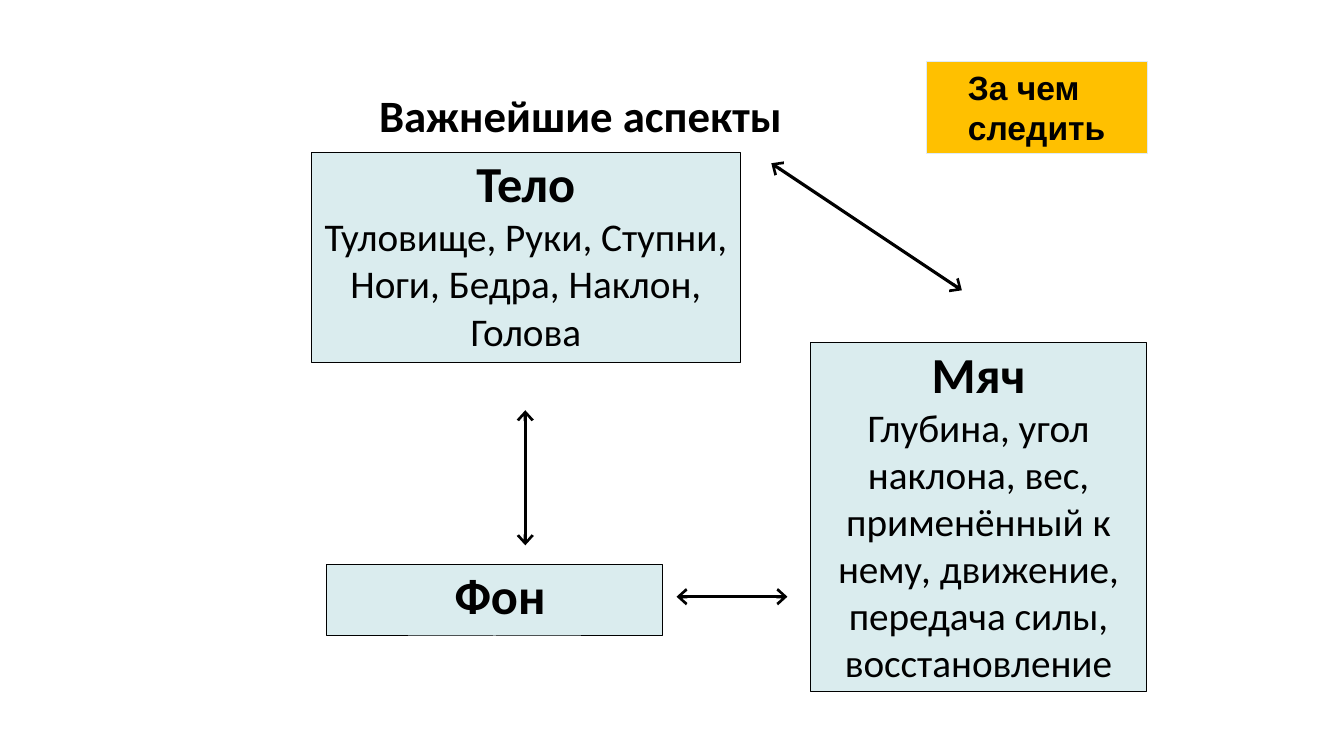
from pptx import Presentation
from pptx.dml.color import RGBColor
from pptx.enum.shapes import MSO_CONNECTOR, MSO_SHAPE
from pptx.enum.text import MSO_ANCHOR, PP_ALIGN
from pptx.oxml.ns import qn
from pptx.util import Inches, Pt
from lxml.etree import SubElement

BLACK = "000000"
PALE_BLUE = "DAECEE"
AMBER = "FFC000"
LIGHT_BLUE = "DEEBF7"


def paint(target, color):
    """Give a fill a solid colour."""
    target.solid()
    target.fore_color.rgb = RGBColor.from_string(color)


def set_insets(frame, left=0, top=0, right=0, bottom=0):
    """Set the text margins in inches."""
    frame.margin_left, frame.margin_top = Inches(left), Inches(top)
    frame.margin_right, frame.margin_bottom = Inches(right), Inches(bottom)


def write(para, text, size=28, font="Calibri", bold=False, align=PP_ALIGN.CENTER):
    """Put one formatted run into a paragraph."""
    para.alignment = align
    span = para.add_run()
    span.text = text
    span.font.size = Pt(size)
    span.font.name = font
    span.font.bold = bold
    paint(span.font.fill, BLACK)


def add_box(page, left, top, width, height, fill, line, line_width):
    """Draw a filled rectangle and return its text frame."""
    box = page.shapes.add_shape(MSO_SHAPE.RECTANGLE, Inches(left), Inches(top),
                                Inches(width), Inches(height))
    box.shadow.inherit = False
    paint(box.fill, fill)
    paint(box.line.fill, line)
    box.line.width = Pt(line_width)
    box.text_frame.word_wrap = True
    return box.text_frame


def add_aspect(page, left, top, width, height, heading, details="", indent=0):
    """Draw an aspect box with a bold heading and optional details."""
    frame = add_box(page, left, top, width, height, PALE_BLUE, BLACK, 0.72)
    set_insets(frame, left=indent)
    frame.vertical_anchor = MSO_ANCHOR.TOP
    write(frame.paragraphs[0], heading, size=36, bold=True)
    if details:
        write(frame.add_paragraph(), details)


def add_title(page, text):
    """Write the slide title."""
    box = page.shapes.add_textbox(Inches(3.76), Inches(0.84), Inches(5), Inches(0.6))
    frame = box.text_frame
    frame.word_wrap = True
    frame.vertical_anchor = MSO_ANCHOR.MIDDLE
    set_insets(frame)
    write(frame.paragraphs[0], text, size=32, bold=True, align=PP_ALIGN.LEFT)


def add_label(page, text):
    """Draw the amber label in the corner."""
    frame = add_box(page, 9.19, 0.61, 2.19, 0.91, AMBER, LIGHT_BLUE, 0.75)
    set_insets(frame, left=0.41, right=0.1)
    frame.vertical_anchor = MSO_ANCHOR.MIDDLE
    write(frame.paragraphs[0], text, size=24, font="Arial", bold=True,
          align=PP_ALIGN.LEFT)


def add_double_arrow(page, x1, y1, x2, y2):
    """Draw a line with an open arrowhead at both ends."""
    arrow = page.shapes.add_connector(MSO_CONNECTOR.STRAIGHT, Inches(x1), Inches(y1),
                                      Inches(x2), Inches(y2))
    paint(arrow.line.fill, BLACK)
    arrow.line.width = Pt(2.25)
    properties = arrow.element.spPr
    outline = properties.find(qn("a:ln"))
    for end in ("a:headEnd", "a:tailEnd"):
        SubElement(outline, qn(end), type="arrow", w="lg", len="med")
    SubElement(properties, qn("a:effectLst"))


def main():
    """Build the slide and save it."""
    deck = Presentation()
    deck.slide_width, deck.slide_height = Inches(13.33), Inches(7.5)
    page = deck.slides.add_slide(deck.slide_layouts[6])
    paint(page.background.fill, "FFFFFF")
    add_double_arrow(page, 5.21, 4.07, 5.21, 5.41)
    add_double_arrow(page, 6.71, 5.92, 7.81, 5.92)
    add_double_arrow(page, 7.65, 1.62, 9.54, 2.88)
    add_aspect(page, 3.24, 5.6, 3.33, 0.71, "Фон", indent=0.11)
    add_aspect(page, 8.04, 3.4, 3.33, 3.46, "Мяч",
               "Глубина, угол наклона, вес, применённый к нему, движение, "
               "передача силы, восстановление")
    add_aspect(page, 3.09, 1.51, 4.25, 2.09, "Тело",
               "Туловище, Руки, Ступни, Ноги, Бедра, Наклон, Голова")
    add_title(page, "Важнейшие аспекты")
    add_label(page, "За чем следить")
    deck.save("out.pptx")


if __name__ == "__main__":
    main()
